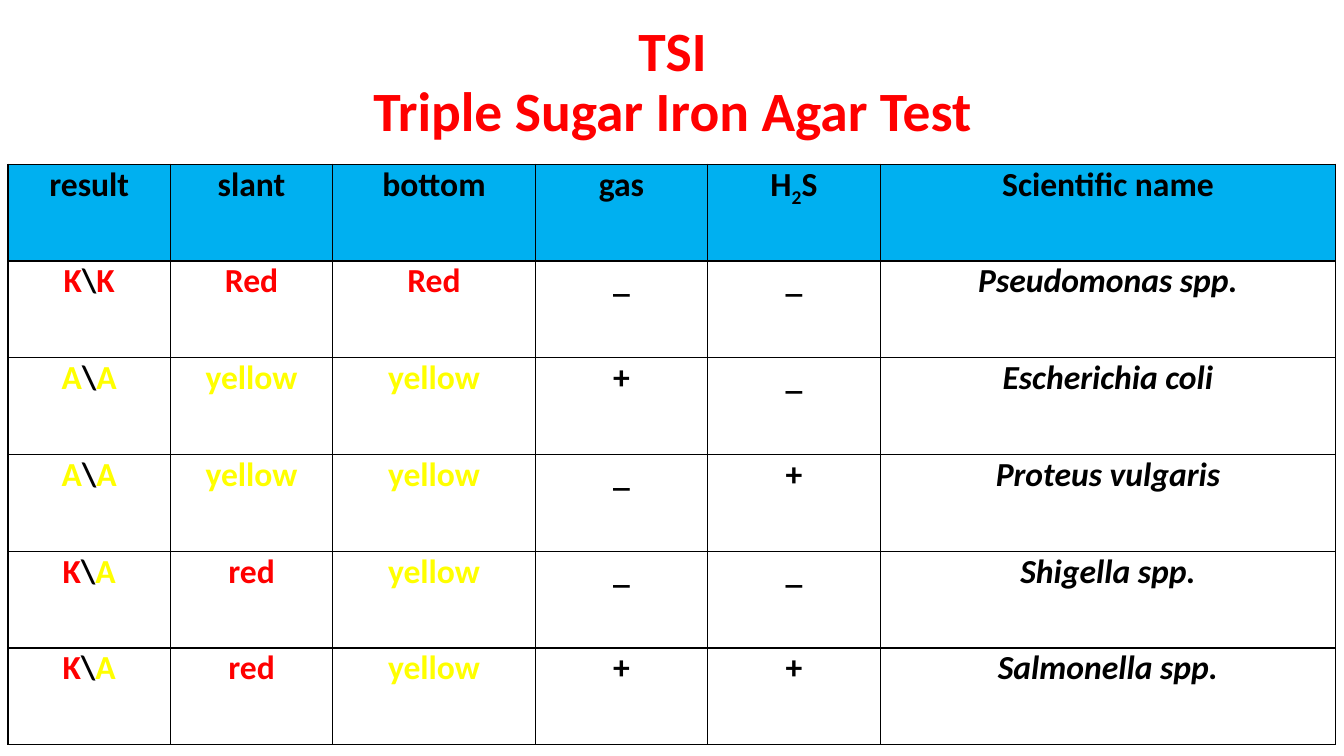
"""Build the slide with the table of Triple Sugar Iron agar test results."""
import pptx
import pptx.dml.color
import pptx.enum.text
import pptx.oxml
import pptx.oxml.ns
import pptx.util

Inches = pptx.util.Inches
CENTER = pptx.enum.text.PP_ALIGN.CENTER
BLACK, RED, YELLOW, HEADER_BLUE = "000000", "FF0000", "FFFF00", "00B0F0"
COLORS = {"K": RED, "Red": RED, "red": RED, "A": YELLOW, "yellow": YELLOW}
COLUMN_WIDTHS = [1.61, 1.61, 2.01, 1.71, 1.71, 4.52]
ROW_HEIGHT = 0.96
NAME_COLUMN = 5
ROWS = [
    ["result", "slant", "bottom", "gas", "H|2|S", "Scientific name"],
    ["K|\\|K", "Red", "Red", "_", "_", "Pseudomonas spp."],
    ["A|\\|A", "yellow", "yellow", "+", "_", "Escherichia coli"],
    ["A|\\|A", "yellow", "yellow", "_", "+", "Proteus vulgaris"],
    ["K|\\|A", "red", "yellow", "_", "_", "Shigella spp."],
    ["K|\\|A", "red", "yellow", "+", "+", "Salmonella spp."],
]


def style_font(font, size, color):
    font.name = "Calibri"
    font.size = pptx.util.Pt(size)
    font.bold = True
    font.color.rgb = pptx.dml.color.RGBColor.from_string(color)


def add_borders(cell):
    properties = cell._tc.get_or_add_tcPr()
    for side in ("lnL", "lnR", "lnT", "lnB"):
        properties.append(pptx.oxml.parse_xml(
            f'<a:{side} {pptx.oxml.ns.nsdecls("a")} w="12700"><a:solidFill>'
            f'<a:srgbClr val="{BLACK}"/></a:solidFill></a:{side}>'))


deck = pptx.Presentation()
deck.slide_width, deck.slide_height = Inches(13.33), Inches(7.5)
page = deck.slides.add_slide(deck.slide_layouts[5])

title = page.shapes.title
title.left, title.top = Inches(0.92), Inches(0.4)
title.width, title.height = Inches(11.5), Inches(1.45)
frame = title.text_frame
frame.text = "TSI\vTriple Sugar Iron Agar Test"
frame.word_wrap = True
frame.auto_size = pptx.enum.text.MSO_AUTO_SIZE.NONE
frame.vertical_anchor = pptx.enum.text.MSO_ANCHOR.MIDDLE
frame.margin_bottom = Inches(0.65)
para = frame.paragraphs[0]
para.alignment = CENTER
para.line_spacing = 0.9
for span in para.runs:
    style_font(span.font, 39.6, RED)

table = page.shapes.add_table(
    len(ROWS), len(COLUMN_WIDTHS), Inches(0.08), Inches(1.63),
    Inches(sum(COLUMN_WIDTHS)), Inches(ROW_HEIGHT * len(ROWS))).table
table.first_row = table.horz_banding = False
for column, width in zip(table.columns, COLUMN_WIDTHS):
    column.width = Inches(width)

for row_index, texts in enumerate(ROWS):
    table.rows[row_index].height = Inches(ROW_HEIGHT)
    for column_index, text in enumerate(texts):
        cell = table.cell(row_index, column_index)
        cell.margin_left = cell.margin_right = Inches(0.07)
        cell.margin_top = cell.margin_bottom = 0
        add_borders(cell)
        if row_index == 0:
            cell.fill.solid()
            cell.fill.fore_color.rgb = pptx.dml.color.RGBColor.from_string(HEADER_BLUE)
        else:
            cell.fill.background()
        para = cell.text_frame.paragraphs[0]
        para.alignment = CENTER
        for part in text.split("|"):
            span = para.add_run()
            span.text = part
            style_font(span.font, 24, COLORS.get(part, BLACK))
            span.font.italic = row_index > 0 and column_index == NAME_COLUMN
            if part == "2":
                span._r.get_or_add_rPr().set("baseline", "-25000")

deck.save("out.pptx")
